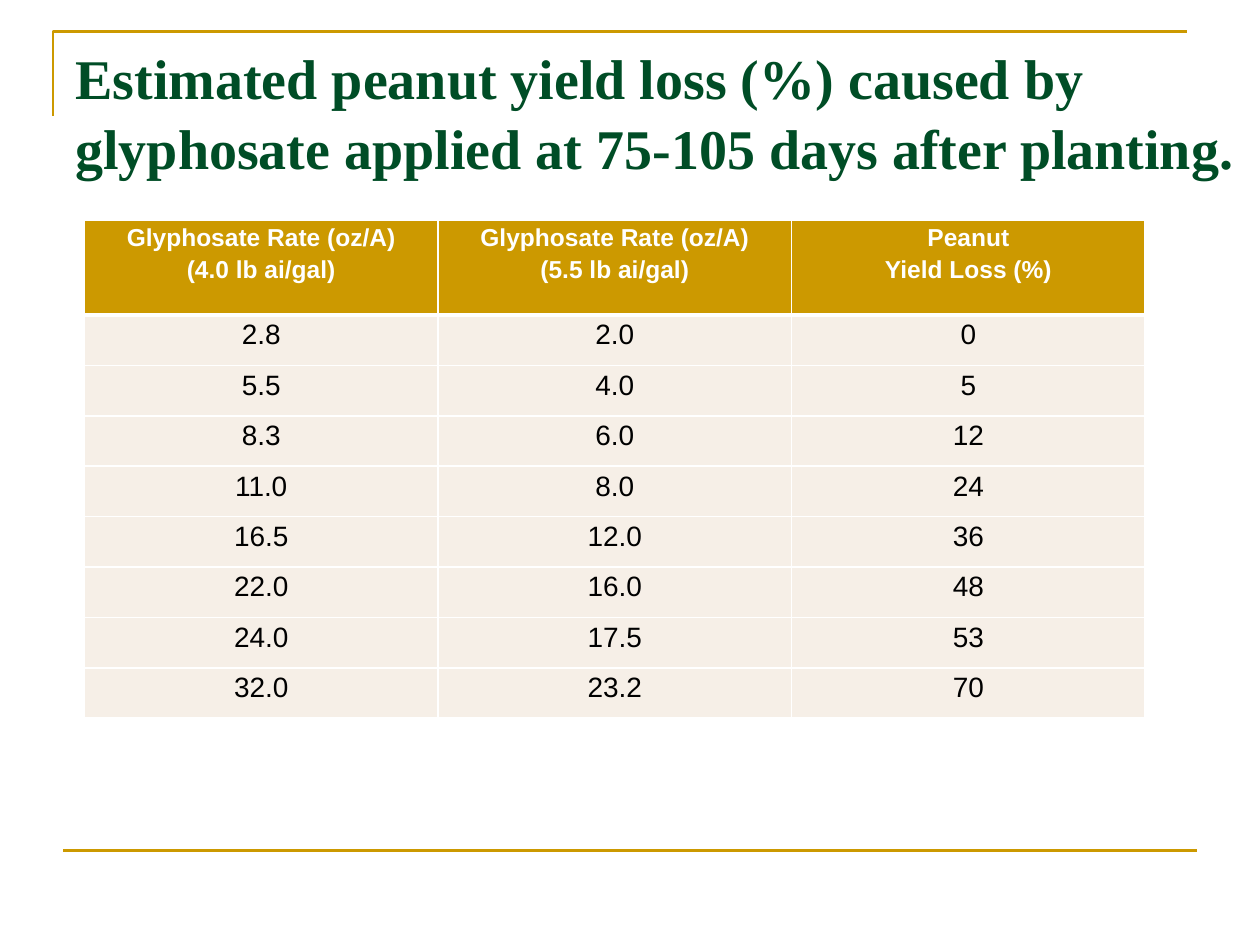
from lxml.etree import SubElement
from pptx import Presentation
from pptx.dml.color import RGBColor
from pptx.enum.shapes import MSO_CONNECTOR
from pptx.enum.text import MSO_ANCHOR, PP_ALIGN
from pptx.oxml.ns import qn
from pptx.util import Inches, Pt

GOLD = RGBColor(0xCC, 0x99, 0x00)
GREEN = RGBColor(0x00, 0x4D, 0x26)
CREAM = RGBColor(0xF6, 0xEF, 0xE7)
WHITE = RGBColor(0xFF, 0xFF, 0xFF)
BLACK = RGBColor(0x00, 0x00, 0x00)

TITLE = ("Estimated peanut yield loss (%) caused by "
         "glyphosate applied at 75-105 days after planting.")
HEADERS = [
    "Glyphosate Rate (oz/A)\n(4.0 lb ai/gal)",
    "Glyphosate Rate (oz/A)\n(5.5 lb ai/gal)",
    "Peanut\nYield Loss (%)",
]
YIELD_LOSS = [
    ("2.8", "2.0", "0"),
    ("5.5", "4.0", "5"),
    ("8.3", "6.0", "12"),
    ("11.0", "8.0", "24"),
    ("16.5", "12.0", "36"),
    ("22.0", "16.0", "48"),
    ("24.0", "17.5", "53"),
    ("32.0", "23.2", "70"),
]
TABLE_LEFT, TABLE_TOP, TABLE_WIDTH = 0.67, 1.75, 8.42
HEADER_HEIGHT, ROW_HEIGHT = 0.75, 0.4


def write(frame, text, *, font, size, color, bold=False,
          align=PP_ALIGN.LEFT, spacing=1.0):
    frame.word_wrap = True
    frame.text = text
    for paragraph in frame.paragraphs:
        paragraph.alignment = align
        paragraph.line_spacing = spacing
        paragraph.font.name = font
        paragraph.font.size = Pt(size)
        paragraph.font.bold = bold
        paragraph.font.color.rgb = color


def set_borders(cell, **widths):
    """Draw white borders; keys are L, R, T, B in that order, values points."""
    properties = cell._tc.get_or_add_tcPr()
    for index, (side, width) in enumerate(widths.items()):
        border = SubElement(properties, qn(f"a:ln{side}"), w=str(Pt(width)))
        fill = SubElement(border, qn("a:solidFill"))
        SubElement(fill, qn("a:srgbClr"), val=str(WHITE))
        properties.insert(index, border)


def add_frame_lines(slide):
    builder = slide.shapes.build_freeform(Inches(0.42), Inches(0.92))
    builder.add_line_segments(
        [(Inches(0.42), Inches(0.25)), (Inches(9.42), Inches(0.25))], close=False)
    corner = builder.convert_to_shape()
    corner.shadow.inherit = False
    corner.fill.background()
    footer = slide.shapes.add_connector(
        MSO_CONNECTOR.STRAIGHT, Inches(0.5), Inches(6.75), Inches(9.5), Inches(6.75))
    SubElement(footer._element.spPr, qn("a:effectLst"))
    for rule in (corner, footer):
        rule.line.color.rgb = GOLD
        rule.line.width = Pt(1.5)


def add_title(slide):
    title = slide.shapes.add_textbox(
        Inches(0.5), Inches(0.25), Inches(9.42), Inches(1.25))
    title.text_frame.vertical_anchor = MSO_ANCHOR.MIDDLE
    write(title.text_frame, TITLE, font="Times New Roman", size=32,
          color=GREEN, bold=True, spacing=1.05)


def add_loss_table(slide):
    rows = [HEADERS, *YIELD_LOSS]
    height = HEADER_HEIGHT + ROW_HEIGHT * len(YIELD_LOSS)
    table = slide.shapes.add_table(
        len(rows), len(HEADERS), Inches(TABLE_LEFT), Inches(TABLE_TOP),
        Inches(TABLE_WIDTH), Inches(height)).table
    for r, row in enumerate(rows):
        header = r == 0
        table.rows[r].height = Inches(HEADER_HEIGHT if header else ROW_HEIGHT)
        for c, text in enumerate(row):
            cell = table.cell(r, c)
            cell.margin_left = cell.margin_right = Inches(0.07)
            cell.margin_top = cell.margin_bottom = 0
            cell.fill.solid()
            cell.fill.fore_color.rgb = GOLD if header else CREAM
            set_borders(cell, L=1, R=1, T=3 if r == 1 else 1, B=3 if header else 1)
            write(cell.text_frame, text, font="Arial", size=14 if header else 16,
                  color=WHITE if header else BLACK, bold=header,
                  align=PP_ALIGN.CENTER, spacing=1.15)


def main():
    deck = Presentation()
    deck.slide_width, deck.slide_height = Inches(10), Inches(7.5)
    slide = deck.slides.add_slide(deck.slide_layouts[6])
    add_frame_lines(slide)
    add_title(slide)
    add_loss_table(slide)
    deck.save("out.pptx")


if __name__ == "__main__":
    main()
